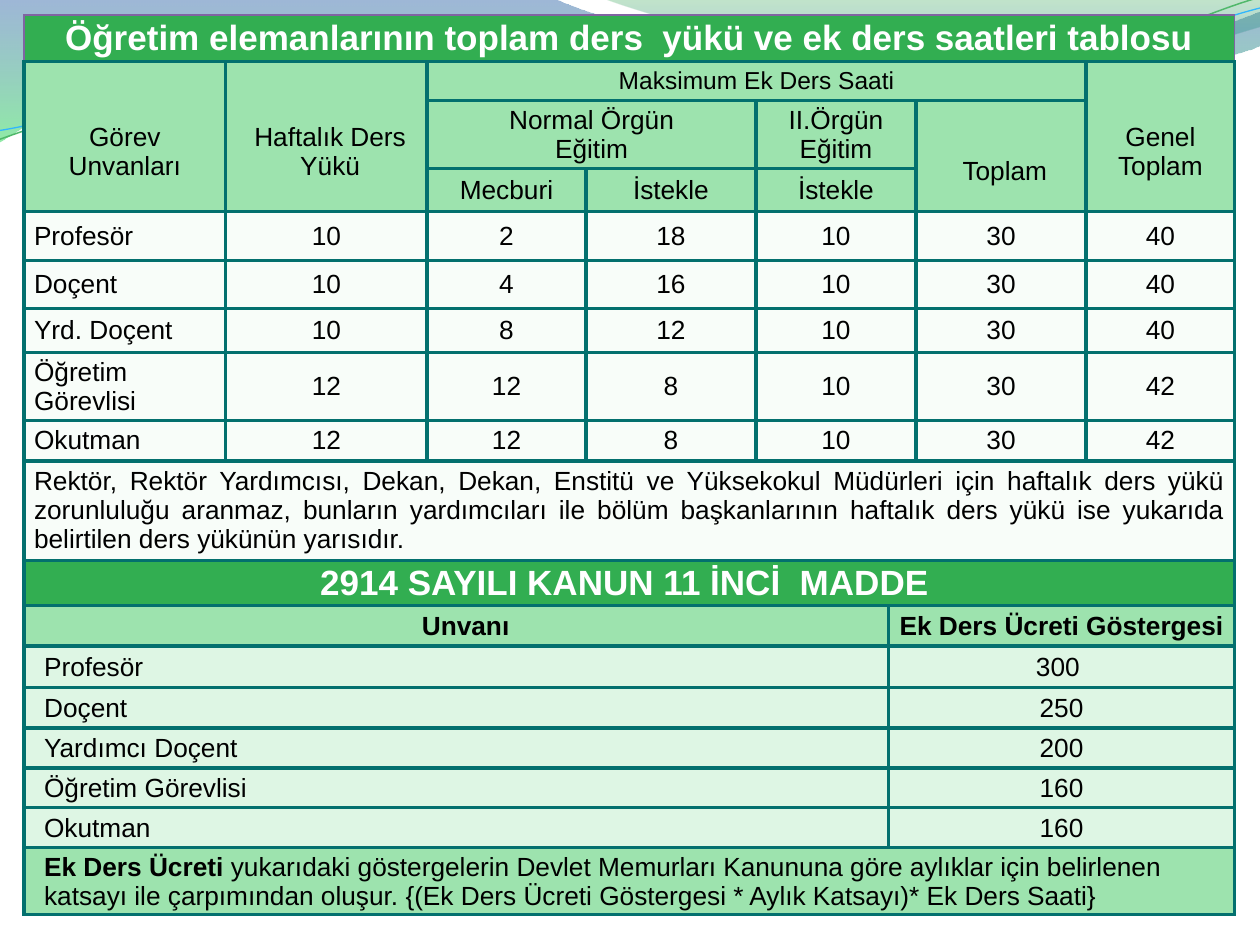
from lxml.etree import SubElement
from pptx import Presentation
from pptx.dml.color import RGBColor
from pptx.enum.text import MSO_ANCHOR, PP_ALIGN
from pptx.oxml.ns import qn
from pptx.util import Inches, Pt

BLACK = RGBColor(0x00, 0x00, 0x00)
WHITE = RGBColor(0xFF, 0xFF, 0xFF)
GREEN = RGBColor(0x32, 0xAE, 0x51)
LIGHT = RGBColor(0x9D, 0xE3, 0xAE)
PALE = RGBColor(0xDE, 0xF6, 0xE4)
TEAL = RGBColor(0x03, 0x70, 0x6E)
PURPLE = RGBColor(0x80, 0x64, 0xA2)
WAVE_BLUE = RGBColor(0x29, 0x60, 0xA7)
WAVE_GREEN = RGBColor(0x35, 0xDA, 0x5E)
RIBBON_GREEN = RGBColor(0x36, 0xA7, 0x52)
RIBBON_BLUE = RGBColor(0x24, 0x72, 0xD3)
LINE_GREEN = RGBColor(0x50, 0xB8, 0x6A)
LINE_BLUE = RGBColor(0x31, 0xB6, 0xFD)

prs = Presentation()
prs.slide_width, prs.slide_height = Inches(10), Inches(7.5)
slide = prs.slides.add_slide(prs.slide_layouts[6])


def draw_outline(start, pieces, close):
    """Draw straight pieces (x, y) and cubic pieces (two controls, then the end)."""
    points = [(Inches(x), Inches(y)) for piece in pieces
              for x, y in zip(piece[::2], piece[1::2])]
    builder = slide.shapes.build_freeform(Inches(start[0]), Inches(start[1]))
    builder.add_line_segments(points, close=close)
    sp = builder.convert_to_shape()
    sp.shadow.inherit = False
    segments = iter(list(sp._element.spPr.iter(qn("a:lnTo"))))
    for piece in pieces:
        first = next(segments)
        if len(piece) == 6:
            # Three straight segments become one cubic curve
            first.tag = qn("a:cubicBezTo")
            for _ in range(2):
                extra = next(segments)
                first.append(extra[0])
                extra.getparent().remove(extra)
    return sp


# Waves at the top: gradient stops are (position, colour, opacity in percent)
waves = [
    ((0, 0), [(4.4, -0.01), (4.76, 0.17, 6.64, 0.63, 7.58, 0.63),
              (8.53, 0.63, 9.58, 0.26, 10, 0.09), (10.01, 0.36),
              (9.83, 0.44, 8.7, 0.76, 7.46, 0.75), (6.22, 0.75, 3.82, 0.28, 2.57, 0.34),
              (1.29, 0.36, 0.46, 0.83, -0.01, 1.13)],
     [(0, WAVE_BLUE, 45), (1, WAVE_GREEN, 55)]),
    ((4.79, -0.01), [(5.09, 0.11, 6.82, 0.62, 7.69, 0.65),
                     (8.56, 0.69, 9.61, 0.32, 10, 0.21), (10, 0)],
     [(0, RIBBON_GREEN, 30), (0.8, RIBBON_BLUE, 45)]),
]
for start, pieces, stops in waves:
    sp = draw_outline(start, pieces, True)
    sp.line.fill.background()
    sp.fill.gradient()
    sp.fill.gradient_angle = 270
    for stop, (position, color, _) in zip(sp.fill.gradient_stops, stops):
        stop.position = position
        stop.color.rgb = color
    for clr, (_, _, opacity) in zip(sp._element.spPr.iter(qn("a:srgbClr")), stops):
        SubElement(clr, qn("a:alpha"), val=str(opacity * 1000))

wave_lines = [
    ((-0.02, 0.87), [(0.47, 0.72, 1.58, 0.41, 2.77, 0.42), (3.96, 0.42, 5.91, 0.93, 7.12, 0.9),
                     (8.32, 0.87, 9.4, 0.36, 10, 0.22)], LINE_GREEN, 0.85),
    ((-0.02, 0.8), [(0.46, 0.75, 1.64, 0.45, 2.83, 0.46), (4.03, 0.46, 5.96, 0.89, 7.16, 0.85),
                    (8.35, 0.83, 9.42, 0.42, 10.02, 0.3)], LINE_BLUE, 0.75),
]
for start, pieces, color, width in wave_lines:
    sp = draw_outline(start, pieces, False)
    sp.rotation = 357.3
    sp.fill.background()
    sp.line.color.rgb = color
    sp.line.width = Pt(width)

# Table grid
col_widths = [1.6, 1.6, 1.26, 1.35, 1.05, 0.22, 1.35, 1.18]
row_heights = [0.37, 0.31, 0.54, 0.34, 0.39, 0.38, 0.35, 0.54, 0.32, 0.79,
               0.36, 0.32, 0.33, 0.32, 0.32, 0.31, 0.32, 0.53]
table = slide.shapes.add_table(len(row_heights), len(col_widths), Inches(0.19), Inches(0.12),
                               Inches(sum(col_widths)), Inches(sum(row_heights))).table
table.first_row = table.horz_banding = False
for col, width in zip(table.columns, col_widths):
    col.width = Inches(width)
for row, height in zip(table.rows, row_heights):
    row.height = Inches(height)

for i, row in enumerate(table.rows):
    for cell in row.cells:
        for side in ("lnL", "lnR", "lnT", "lnB"):
            title_edge = i == 0 and side != "lnB"
            color, width = (PURPLE, 1) if title_edge else (TEAL, 2.25)
            ln = SubElement(cell._tc.get_or_add_tcPr(), qn(f"a:{side}"), w=str(Pt(width)))
            SubElement(SubElement(ln, qn("a:solidFill")), qn("a:srgbClr"), val=str(color))


def put(row, col, text, fill, rows=1, cols=1, align=PP_ALIGN.CENTER, size=15, bold=False,
        color=BLACK, opacity=100, margins=(0.01, 0.01, 0.01, 0.01)):
    """Fill one cell, merged over rows x cols, and return its last paragraph."""
    cell = table.cell(row, col)
    if rows * cols > 1:
        cell.merge(table.cell(row + rows - 1, col + cols - 1))
    for side, value in zip(("left", "top", "right", "bottom"), margins):
        setattr(cell, f"margin_{side}", Inches(value))
    cell.vertical_anchor = MSO_ANCHOR.MIDDLE
    cell.fill.solid()
    cell.fill.fore_color.rgb = fill
    if opacity < 100:
        clr = cell._tc.tcPr.find(qn("a:solidFill")).find(qn("a:srgbClr"))
        SubElement(clr, qn("a:alpha"), val=str(opacity * 1000))
    cell.text_frame.text = text
    for p in cell.text_frame.paragraphs:
        p.alignment = align
        for r in p.runs:
            r.font.name, r.font.size, r.font.bold = "Arial", Pt(size), bold
            r.font.color.rgb = color
    return p


banner = dict(fill=GREEN, cols=8, size=20, bold=True, color=WHITE)
put(0, 0, "Öğretim elemanlarının toplam ders  yükü ve ek ders saatleri tablosu", **banner)

# Column heads of the teaching load
put(1, 0, "Görev\nUnvanları", LIGHT, rows=3, margins=(0.01, 0.25, 0.01, 0.01))
put(1, 1, "Haftalık Ders\nYükü", LIGHT, rows=3, margins=(0.07, 0.25, 0.01, 0.01))
put(1, 2, "Maksimum Ek Ders Saati", LIGHT, cols=5, size=14)
put(1, 7, "Genel Toplam", LIGHT, rows=3, margins=(0.01, 0.25, 0.01, 0.01))
put(2, 2, "Normal Örgün\nEğitim", LIGHT, cols=2)
put(2, 4, "II.Örgün\nEğitim", LIGHT, cols=2)
put(2, 6, "Toplam", LIGHT, rows=2, margins=(0.07, 0.25, 0.01, 0.01))
put(3, 2, "Mecburi", LIGHT)
put(3, 3, "İstekle", LIGHT)
put(3, 4, "İstekle", LIGHT, cols=2)

loads = [
    ("Profesör", 10, 2, 18, 10, 30, 40),
    ("Doçent", 10, 4, 16, 10, 30, 40),
    ("Yrd. Doçent", 10, 8, 12, 10, 30, 40),
    ("Öğretim Görevlisi", 12, 12, 8, 10, 30, 42),
    ("Okutman", 12, 12, 8, 10, 30, 42),
]
wide = (0.08, 0.01, 0.08, 0.01)
for i, (post, *hours) in enumerate(loads, start=4):
    put(i, 0, post, PALE, align=PP_ALIGN.LEFT, opacity=20, margins=wide)
    for col, value in zip((1, 2, 3, 4, 6, 7), hours):
        put(i, col, str(value), PALE, cols=2 if col == 4 else 1, opacity=20)

put(9, 0, "Rektör, Rektör Yardımcısı, Dekan, Dekan, Enstitü ve Yüksekokul Müdürleri için haftalık "
    "ders yükü zorunluluğu aranmaz, bunların yardımcıları ile bölüm başkanlarının haftalık ders "
    "yükü ise yukarıda belirtilen ders yükünün yarısıdır.",
    PALE, cols=8, align=PP_ALIGN.JUSTIFY, opacity=20, margins=wide)

# Fee indicators
indent, tight = (0.16, 0.01, 0.01, 0), (0.01, 0.01, 0.01, 0)
put(10, 0, "2914 SAYILI KANUN 11 İNCİ  MADDE ", margins=tight, **banner)
put(11, 0, "Unvanı", LIGHT, cols=5, bold=True, margins=indent)
put(11, 5, "Ek Ders Ücreti Göstergesi", LIGHT, cols=3, bold=True, margins=tight)
fees = [("Profesör", "300 "), ("Doçent", "250"), ("Yardımcı Doçent", "200"),
        ("Öğretim Görevlisi", "160"), ("Okutman", "160")]
for i, (post, fee) in enumerate(fees, start=12):
    put(i, 0, post, PALE, cols=5, align=PP_ALIGN.LEFT, margins=indent)
    put(i, 5, fee, PALE, cols=3, margins=tight)

p = put(17, 0, "Ek Ders Ücreti", LIGHT, cols=8, align=PP_ALIGN.LEFT, bold=True, margins=indent)
r = p.add_run()
r.text = (" yukarıdaki göstergelerin Devlet Memurları Kanununa göre aylıklar için belirlenen "
          "katsayı ile çarpımından oluşur. {(Ek Ders Ücreti Göstergesi * Aylık Katsayı)* "
          "Ek Ders Saati}")
r.font.name, r.font.size, r.font.bold = "Arial", Pt(15), False
r.font.color.rgb = BLACK

prs.save("out.pptx")
